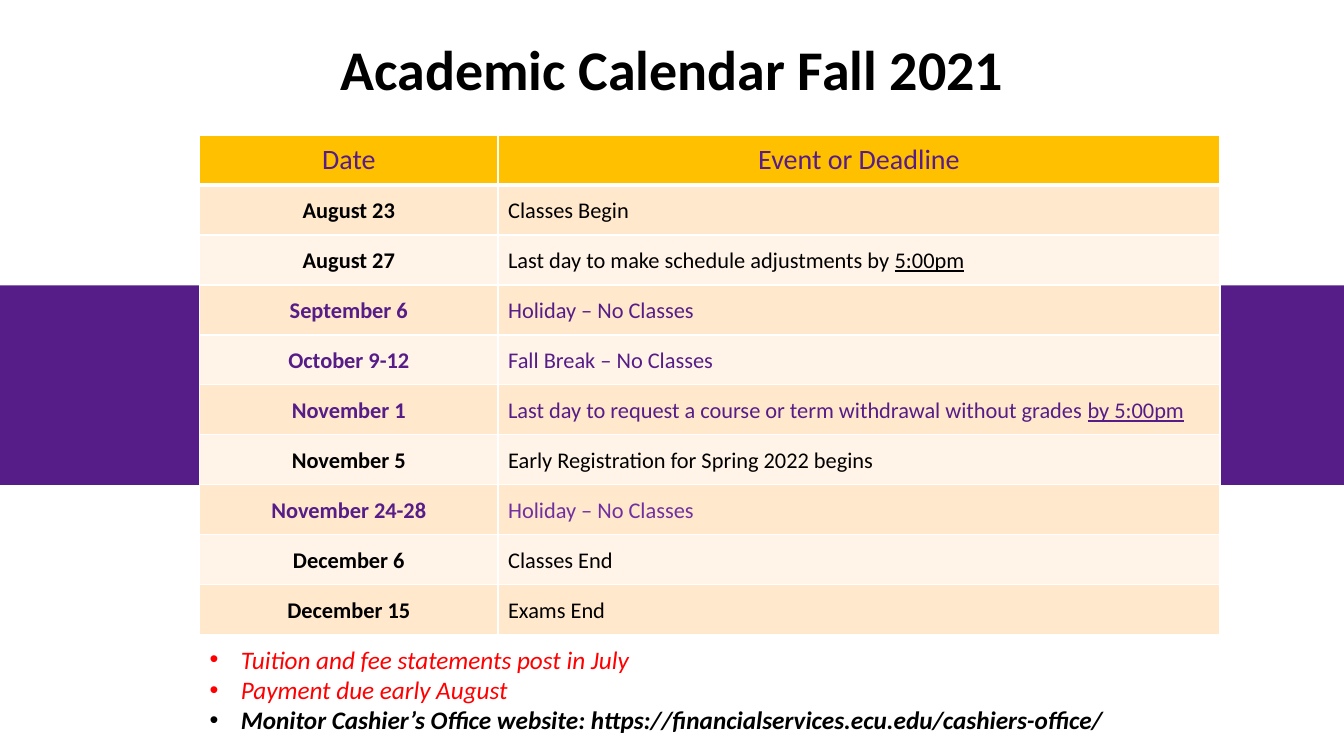
from lxml import etree
from pptx import Presentation
from pptx import util as u
from pptx.dml.color import RGBColor
from pptx.enum import shapes, text
from pptx.oxml import ns

PX = 9144  # 100 px to the inch
PURPLE, VIOLET, BLACK, RED = "561D88", "7030A0", "000000", "FF0000"
WHITE, GOLD, BANDS = "FFFFFF", "FFC000", ("FFE8CC", "FFF4E7")
MID, CENTER = text.MSO_ANCHOR.MIDDLE, text.PP_ALIGN.CENTER


def px(*vals):
    return [u.Emu(val * PX) for val in vals]


def color(code):
    return RGBColor.from_string(code)


class Deck:
    face = "Calibri"

    def __init__(self, wide, high):
        self.prs = Presentation()
        self.prs.slide_width, self.prs.slide_height = px(wide, high)
        self.slide = self.prs.slides.add_slide(self.prs.slide_layouts[6])

    def style(self, run, size, hue, bold=False, italic=False, under=False):
        font = run.font
        font.name, font.size = self.face, u.Pt(size)
        font.bold, font.italic, font.underline = bold, italic, under
        font.color.rgb = color(hue)

    def band(self, box, hue):
        rect = self.slide.shapes.add_shape(shapes.MSO_SHAPE.RECTANGLE, *px(*box))
        rect.shadow.inherit = False
        rect.fill.solid()
        rect.fill.fore_color.rgb = color(hue)
        rect.line.fill.background()

    def frame(self, box):
        frame = self.slide.shapes.add_textbox(*px(*box)).text_frame
        frame.word_wrap = True
        return frame

    def title(self, box, words, size):
        frame = self.frame(box)
        frame.text = words
        frame.vertical_anchor = MID
        par = frame.paragraphs[0]
        par.alignment, par.line_spacing = CENTER, 0.9
        self.style(par.runs[0], size, BLACK, bold=True)

    def bullets(self, box, items, size, indent):
        frame = self.frame(box)
        frame.auto_size = text.MSO_AUTO_SIZE.SHAPE_TO_FIT_TEXT
        frame.text = "\n".join(words for words, _, _ in items)
        for par, (_, hue, bold) in zip(frame.paragraphs, items):
            props = par._p.get_or_add_pPr()
            props.set("marL", str(indent * PX))
            props.set("indent", str(-indent * PX))
            etree.SubElement(props, ns.qn("a:buFont")).set("typeface", "Arial")
            etree.SubElement(props, ns.qn("a:buChar")).set("char", "•")
            self.style(par.runs[0], size, hue, bold, italic=True)

    def borders(self, cell, base):
        props = cell._tc.get_or_add_tcPr()
        for side, width in zip("LRTB", (1, 1, 1, base)):
            line = etree.SubElement(props, ns.qn("a:ln" + side), w=str(u.Pt(width)))
            fill = etree.SubElement(line, ns.qn("a:solidFill"))
            etree.SubElement(fill, ns.qn("a:srgbClr"), val=WHITE)

    def cell(self, cell, words, size, hue, back, bold=False, mid=False, tail="", base=1):
        self.borders(cell, base)
        cell.fill.solid()
        cell.fill.fore_color.rgb = color(back)
        par = cell.text_frame.paragraphs[0]
        par.text = words
        par.line_spacing, par.space_after = 1.07, u.Pt(8)
        if mid:
            par.alignment = CENTER
        self.style(par.runs[0], size, hue, bold)
        if tail:
            run = par.add_run()
            run.text = tail
            self.style(run, size, hue, under=True)

    def table(self, box, cols, heads, rows):
        grid = self.slide.shapes.add_table(len(rows) + 1, len(cols), *px(*box)).table
        for col, width in zip(grid.columns, px(*cols)):
            col.width = width
        for col, head in enumerate(heads):
            self.cell(grid.cell(0, col), head, 20, PURPLE, GOLD, mid=True, base=3)
        for row, (date, event, tail, hue, tint) in enumerate(rows, 1):
            back = BANDS[(row - 1) % 2]
            left, right = grid.cell(row, 0), grid.cell(row, 1)
            left.vertical_anchor = right.vertical_anchor = MID
            self.cell(left, date, 16, hue, back, bold=True, mid=True)
            self.cell(right, event, 16, tint, back, tail=tail)


def main():
    deck = Deck(1333, 750)

    # Background band and heading
    deck.band((0, 283, 1333, 198), PURPLE)
    deck.title((0, 9, 1333, 125), "Academic Calendar Fall 2021", 40)

    # Calendar: date, event, underlined ending, date colour, event colour
    deck.table((198, 134, 1012, 496), (296, 716), ("Date", "Event or Deadline"), [
        ("August 23", "Classes Begin", "", BLACK, BLACK),
        ("August 27", "Last day to make schedule adjustments by ", "5:00pm", BLACK, BLACK),
        ("September 6", "Holiday – No Classes", "", PURPLE, PURPLE),
        ("October 9-12", "Fall Break – No Classes", "", PURPLE, PURPLE),
        ("November 1", "Last day to request a course or term withdrawal without grades ",
         "by 5:00pm", PURPLE, PURPLE),
        ("November 5", "Early Registration for Spring 2022 begins", "", BLACK, BLACK),
        ("November 24-28", "Holiday – No Classes", "", PURPLE, VIOLET),
        ("December 6", "Classes End", "", BLACK, BLACK),
        ("December 15", "Exams End", "", BLACK, BLACK),
    ])

    # Payment notes
    deck.bullets((198, 634, 1012, 101), [
        ("Tuition and fee statements post in July", RED, False),
        ("Payment due early August", RED, False),
        ("Monitor Cashier’s Office website: "
         "https://financialservices.ecu.edu/cashiers-office/", BLACK, True),
    ], 18, 31)

    deck.prs.save("out.pptx")


if __name__ == "__main__":
    main()
